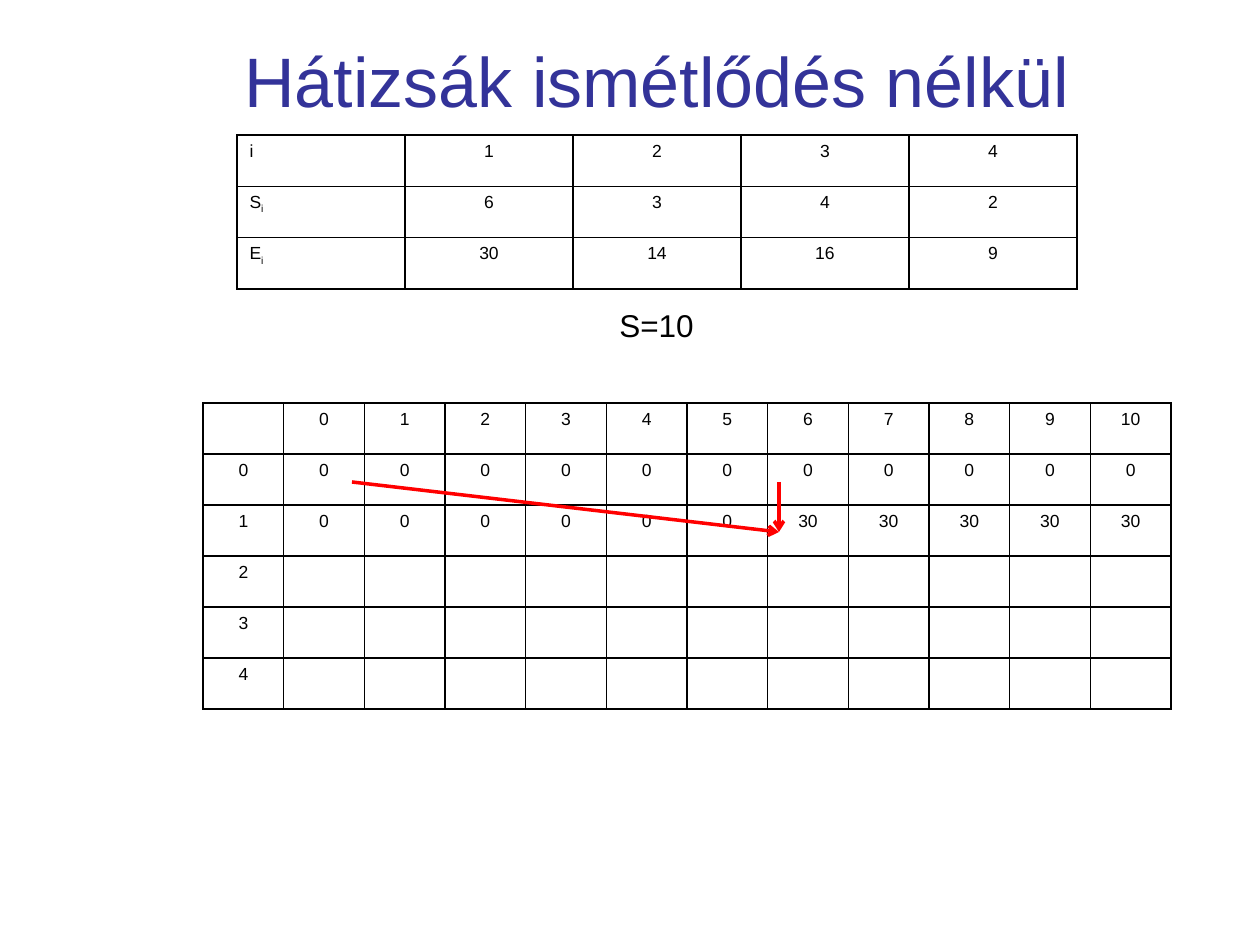
from dataclasses import dataclass

from lxml import etree
from pptx import Presentation
from pptx import util as u
from pptx.dml.color import RGBColor
from pptx.enum import shapes, text
from pptx.oxml import ns

PX_PER_INCH = 126


@dataclass(frozen=True)
class Theme:
    font: str = "Arial"
    title_color: str = "333399"
    ink: str = "000000"
    step_color: str = "FF0000"
    title_size: int = 40
    capacity_size: int = 18
    cell_size: int = 10
    border_width: int = 1
    step_width: int = 2


THEME = Theme()


def px(length):
    return u.Emu(round(length * u.Inches(1) / PX_PER_INCH))


def add_run(paragraph, content, size, color):
    run = paragraph.add_run()
    run.text = content
    formats = {"name": THEME.font, "size": u.Pt(size)}
    for key, value in formats.items():
        setattr(run.font, key, value)
    run.font.color.rgb = RGBColor.from_string(color)
    return run


def add_label(slide, box, content, size, color, frame_formats, align):
    frame = slide.shapes.add_textbox(*map(px, box)).text_frame
    for key, value in frame_formats.items():
        setattr(frame, key, value)
    paragraph = frame.paragraphs[0]
    paragraph.alignment = align
    add_run(paragraph, content, size, color)


def add_borders(cell):
    properties = cell._tc.get_or_add_tcPr()
    for side in ("lnL", "lnR", "lnT", "lnB"):
        border = etree.SubElement(properties, ns.qn(f"a:{side}"),
                                  w=str(u.Pt(THEME.border_width)))
        fill = etree.SubElement(border, ns.qn("a:solidFill"))
        etree.SubElement(fill, ns.qn("a:srgbClr"), val=THEME.ink)


def fill_cell(cell, content, align):
    add_borders(cell)
    cell.fill.background()
    paragraph = cell.text_frame.paragraphs[0]
    paragraph.alignment = align
    base, _, subscript = content.partition("_")
    if base:
        add_run(paragraph, base, THEME.cell_size, THEME.ink)
    if subscript:
        run = add_run(paragraph, subscript, THEME.cell_size, THEME.ink)
        run.font._element.set("baseline", "-25000")


def add_grid(slide, box, rows, heading_align):
    left, top, width, height = map(px, box)
    grid = slide.shapes.add_table(len(rows), len(rows[0]),
                                  left, top, width, height).table
    for flag in ("first_row", "horz_banding"):
        setattr(grid, flag, False)
    for column in grid.columns:
        column.width = width // len(rows[0])
    for row in grid.rows:
        row.height = height // len(rows)
    for r, values in enumerate(rows):
        for c, value in enumerate(values):
            align = text.PP_ALIGN.CENTER if c else heading_align
            fill_cell(grid.cell(r, c), str(value), align)


def add_step(slide, start, end):
    step = slide.shapes.add_connector(shapes.MSO_CONNECTOR.STRAIGHT,
                                      *map(px, (*start, *end)))
    step.line.color.rgb = RGBColor.from_string(THEME.step_color)
    step.line.width = u.Pt(THEME.step_width)
    etree.SubElement(step.line._get_or_add_ln(), ns.qn("a:tailEnd"), type="arrow")
    etree.SubElement(step._element.spPr, ns.qn("a:effectLst"))


def main():
    deck = Presentation()
    deck.slide_width, deck.slide_height = px(1260), px(945)
    slide = deck.slides.add_slide(deck.slide_layouts[6])
    center, left = text.PP_ALIGN.CENTER, text.PP_ALIGN.LEFT

    add_label(slide, (84, 0, 1145, 158), "Hátizsák ismétlődés nélkül",
              THEME.title_size, THEME.title_color,
              {"word_wrap": True, "vertical_anchor": text.MSO_ANCHOR.MIDDLE}, center)

    items = [
        ["i", 1, 2, 3, 4],
        ["S_i", 6, 3, 4, 2],
        ["E_i", 30, 14, 16, 9],
    ]
    add_grid(slide, (237, 135, 840, 154), items, left)

    add_label(slide, (607, 300, 101, 50), "S=10",
              THEME.capacity_size, THEME.ink,
              {"word_wrap": False, "auto_size": text.MSO_AUTO_SIZE.SHAPE_TO_FIT_TEXT},
              left)

    capacity, first_size, first_value = 10, items[1][1], items[2][1]
    best_values = [
        ["", *range(capacity + 1)],
        [0] + [0] * (capacity + 1),
        [1] + [0] * first_size + [first_value] * (capacity + 1 - first_size),
        *([item] + [""] * (capacity + 1) for item in (2, 3, 4)),
    ]
    add_grid(slide, (203, 403, 968, 306), best_values, center)

    target = (779, 532)
    for source in ((779, 482), (352, 482)):
        add_step(slide, source, target)

    deck.save("out.pptx")


if __name__ == "__main__":
    main()
